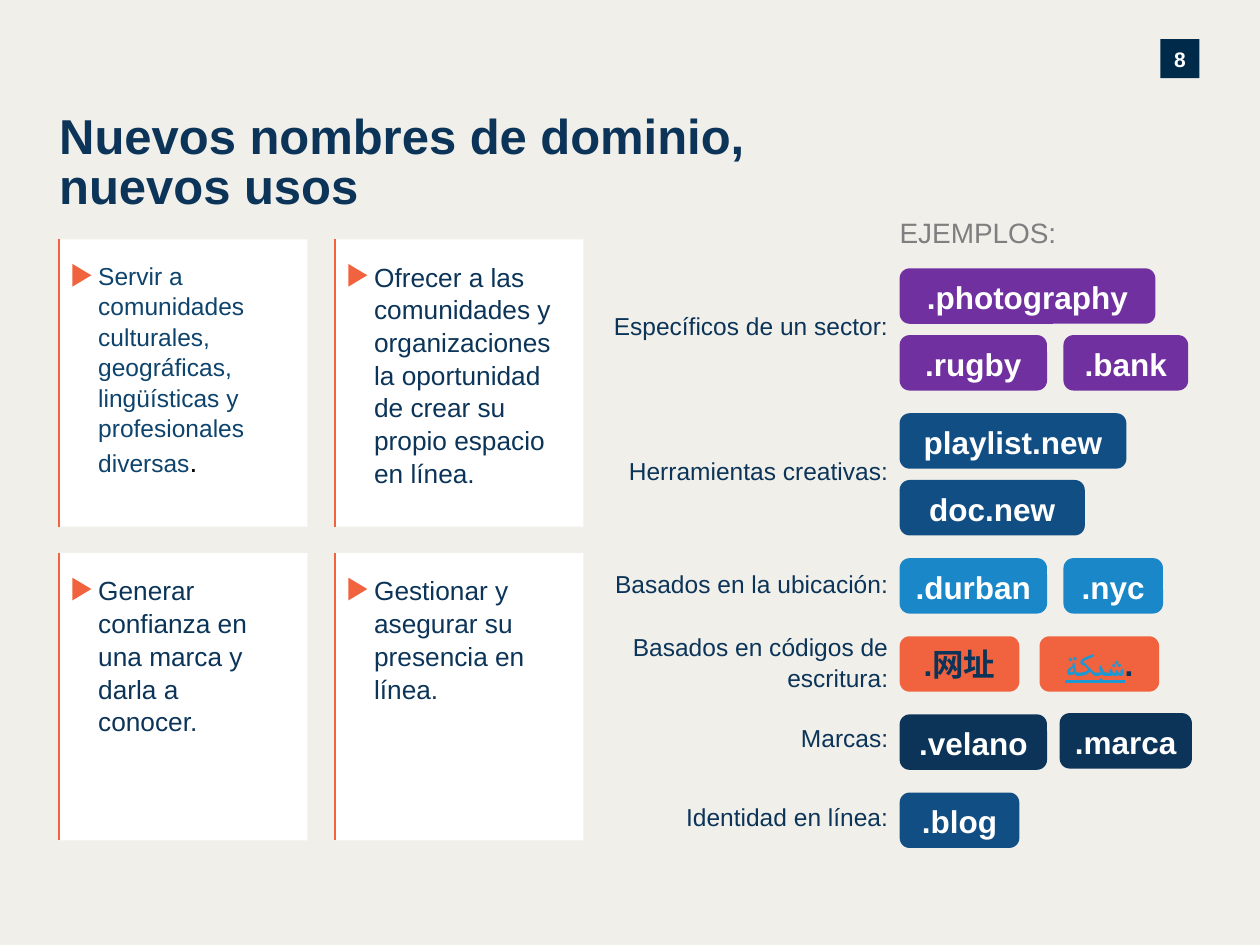
from dataclasses import dataclass
from lxml.etree import SubElement
from pptx import Presentation
from pptx.dml.color import RGBColor
from pptx.enum.shapes import MSO_CONNECTOR, MSO_SHAPE
from pptx.enum.text import MSO_ANCHOR, PP_ALIGN
from pptx.oxml.ns import qn
from pptx.util import Inches, Pt


@dataclass(frozen=True)
class Theme:
    font: str = "Arial"
    paper: str = "F1EFEA"
    white: str = "FFFFFF"
    black: str = "000000"
    navy: str = "0B3458"
    badge: str = "002A49"
    steel: str = "0D436C"
    blue: str = "114E84"
    sky: str = "1A87C9"
    link: str = "1D98D3"
    purple: str = "7030A0"
    orange: str = "F1633E"
    gray: str = "7F7F7F"
    title: int = 28
    chip: int = 18
    head: int = 16
    card: int = 15
    label: int = 14
    page: int = 12


T = Theme()
LEFT, RIGHT = PP_ALIGN.LEFT, PP_ALIGN.RIGHT
MID, TOP = PP_ALIGN.CENTER, MSO_ANCHOR.TOP
CHIP_X, CHIP_H = 7.14, 0.44
CARD_W, CARD_H = 1.97, 2.28


def style(run, size, color, bold=False):
    font = run.font
    font.name, font.size, font.bold = T.font, Pt(size), bold
    font.color.rgb = RGBColor.from_string(color)


def write(shape, text, size, color, bold=False, align=LEFT, anchor=TOP,
          pad=(0, 0, 0, 0), space=1.04):
    """Fill a shape with text; each newline starts a paragraph."""
    frame = shape.text_frame
    frame.text = text
    frame.word_wrap = True
    frame.vertical_anchor = anchor
    (frame.margin_left, frame.margin_top,
     frame.margin_right, frame.margin_bottom) = map(Inches, pad)
    for para in frame.paragraphs:
        para.alignment, para.line_spacing = align, space
        for run in para.runs:
            style(run, size, color, bold)
    return frame


def block(slide, kind, x, y, w, h, fill):
    shape = slide.shapes.add_shape(
        kind, Inches(x), Inches(y), Inches(w), Inches(h))
    shape.shadow.inherit = False
    shape.fill.solid()
    shape.fill.fore_color.rgb = RGBColor.from_string(fill)
    shape.line.fill.background()
    return shape


def note(slide, x, y, w, h, text, size, color, **opts):
    box = slide.shapes.add_textbox(Inches(x), Inches(y), Inches(w), Inches(h))
    return write(box, text, size, color, **opts)


def rule(slide, x, y, h):
    line = slide.shapes.add_connector(
        MSO_CONNECTOR.STRAIGHT, Inches(x), Inches(y), Inches(x), Inches(y + h))
    line.line.color.rgb = RGBColor.from_string(T.orange)
    line.line.width = Pt(1.25)
    SubElement(line._element.spPr, qn("a:effectLst"))


def card(slide, x, y, text, size, color, right):
    shape = block(slide, MSO_SHAPE.RECTANGLE, x, y, CARD_W, CARD_H, T.white)
    frame = write(shape, text, size, color, pad=(0.31, 0.16, right, 0.2))
    mark = block(slide, MSO_SHAPE.ISOSCELES_TRIANGLE,
                 x + 0.09, y + 0.21, 0.18, 0.15, T.orange)
    mark.rotation = 90
    rule(slide, x, y, CARD_H)
    return frame


def chip(slide, x, y, w, text, fill, color=T.white, space=1.06):
    shape = block(slide, MSO_SHAPE.ROUNDED_RECTANGLE, x, y, w, CHIP_H, fill)
    shape.adjustments[0] = 0.18
    return write(shape, text, T.chip, color, True, MID, MSO_ANCHOR.MIDDLE,
                 space=space)


def main():
    deck = Presentation()
    deck.slide_width, deck.slide_height = Inches(10), Inches(7.5)
    slide = deck.slides.add_slide(deck.slide_layouts[6])
    back = slide.background.fill
    back.solid()
    back.fore_color.rgb = RGBColor.from_string(T.paper)

    # Page number and title
    badge = block(slide, MSO_SHAPE.RECTANGLE, 9.21, 0.31, 0.31, 0.31, T.badge)
    write(badge, "8", T.page, T.white, True, MID, MSO_ANCHOR.MIDDLE, space=1.08)
    note(slide, 0.47, 0.91, 8.22, 0.56,
         "Nuevos nombres de dominio, \vnuevos usos",
         T.title, T.navy, bold=True, space=Pt(28.6))

    # Cards, two by two
    cols, rows = (0.47, 2.66), (1.9, 4.39)
    first = card(slide, cols[0], rows[0],
                 "Servir a comunidades\nculturales, geográficas,\n"
                 "lingüísticas y profesionales diversas",
                 T.label, T.steel, 0.24)
    stop = first.paragraphs[-1].add_run()
    stop.text = "."
    style(stop, T.head, T.black)
    for col, row, text, right in (
        (1, 0, "Ofrecer a las comunidades y organizaciones la oportunidad "
               "de crear su propio espacio en línea.", 0.2),
        (0, 1, "Generar confianza en una marca y darla a conocer.", 0.39),
        (1, 1, "Gestionar y asegurar su presencia en línea.", 0.2),
    ):
        card(slide, cols[col], rows[row], text, T.card, T.navy, right)

    # Group labels
    note(slide, CHIP_X, 1.71, 2.46, 0.27, "EJEMPLOS:", T.head, T.gray, space=1)
    for y, text in (
        (2.46, "Específicos de un sector:"),
        (3.61, "Herramientas creativas:"),
        (4.51, "Basados en la ubicación:"),
        (5.01, "Basados en códigos de escritura:"),
        (5.73, "Marcas:"),
        (6.36, "Identidad en línea:"),
    ):
        note(slide, 4.71, y, 2.34, 0.24, text, T.label, T.navy, align=RIGHT)

    # Domain chips
    for x, y, w, text, fill in (
        (CHIP_X, 2.13, 2.03, ".photography", T.purple),
        (CHIP_X, 2.66, 1.17, ".rugby", T.purple),
        (8.44, 2.66, 0.99, ".bank", T.purple),
        (CHIP_X, 3.28, 1.8, "playlist.new", T.blue),
        (CHIP_X, 3.81, 1.47, "doc.new", T.blue),
        (CHIP_X, 4.43, 1.17, ".durban", T.sky),
        (8.44, 4.43, 0.79, ".nyc", T.sky),
        (CHIP_X, 5.67, 1.17, ".velano", T.navy),
        (8.41, 5.66, 1.05, ".marca", T.navy),
        (CHIP_X, 6.29, 0.95, ".blog", T.blue),
    ):
        chip(slide, x, y, w, text, fill)

    # Chips in other scripts
    chip(slide, CHIP_X, 5.05, 0.95, ".网址", T.orange, T.navy, 1)
    para = chip(slide, 8.25, 5.05, 0.95, "شبكة", T.orange, T.link, 1).paragraphs[0]
    para.runs[0].font.underline = True
    dot = para.add_run()
    dot.text = "."
    style(dot, T.chip, T.navy, True)

    deck.save("out.pptx")


if __name__ == "__main__":
    main()
